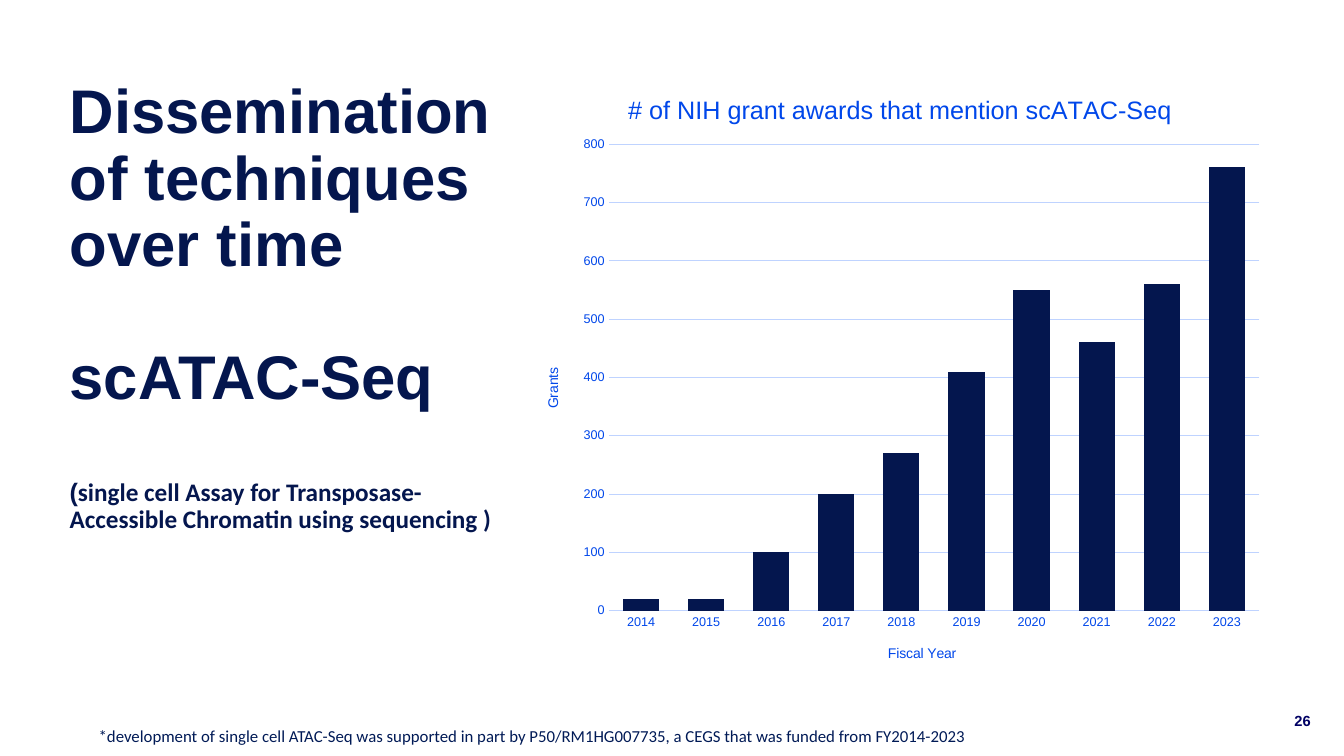
"""Slide on the spread of scATAC-Seq across NIH grant awards."""
import pptx
import pptx.util
import pptx.chart.data
import pptx.dml.color
import pptx.enum.chart
import pptx.enum.text
import pptx.oxml
import pptx.oxml.ns

Inches, Pt = pptx.util.Inches, pptx.util.Pt
HUES = {"navy": "04164E", "ink": "001A56", "blue": "0047EA", "pale": "BFD3FF", "page": "000064"}


def style(font, size, hue, bold=False, face="Arial"):
    font.name, font.size, font.bold = face, Pt(size), bold
    font.color.rgb = pptx.dml.color.RGBColor.from_string(HUES[hue])


def place(node, x, y, size=""):
    for old in node.findall(pptx.oxml.ns.qn("c:layout")):
        node.remove(old)
    inner = '<c:layoutTarget val="inner"/>' if size else ""
    layout = pptx.oxml.parse_xml(
        f'<c:layout {pptx.oxml.ns.nsdecls("c")}><c:manualLayout>{inner}'
        f'<c:xMode val="edge"/><c:yMode val="edge"/><c:x val="{x}"/><c:y val="{y}"/>{size}'
        "</c:manualLayout></c:layout>")
    text = node.find(pptx.oxml.ns.qn("c:tx"))
    if text is None:
        node.insert(0, layout)
    else:
        text.addnext(layout)


deck = pptx.Presentation()
deck.slide_width, deck.slide_height = Inches(13.33), Inches(7.5)
slide = deck.slides.add_slide(deck.slide_layouts[5])

title = slide.shapes.title
title.left, title.top, title.width, title.height = Inches(0.69), Inches(1.72), Inches(4.33), Inches(2.66)
frame = title.text_frame
frame.word_wrap = True
frame.auto_size = pptx.enum.text.MSO_AUTO_SIZE.NONE
frame.vertical_anchor = pptx.enum.text.MSO_ANCHOR.MIDDLE
frame.margin_left = 0
frame.text = "Dissemination of techniques over time\nscATAC-Seq"
note = frame.add_paragraph()
for part in ("(", "single cell Assay for Transposase-Accessible Chromatin using sequencing )"):
    note.add_run().text = part
for para, size, gap in zip(frame.paragraphs, (44, 44, 18), (0, 47.5, 47.5)):
    para.alignment = pptx.enum.text.PP_ALIGN.LEFT
    para.line_spacing = 0.9
    para.space_before = Pt(gap)
    if para.text.startswith("("):
        for run, face in zip(para.runs, ("Arial", "Calibri")):
            style(run.font, size, "navy", True, face)
    else:
        style(para.font, size, "navy", True)

data = pptx.chart.data.CategoryChartData()
data.categories = [str(year) for year in range(2014, 2024)]
data.add_series("Series 1", (20, 20, 100, 200, 270, 410, 550, 460, 560, 760))
chart = slide.shapes.add_chart(
    pptx.enum.chart.XL_CHART_TYPE.COLUMN_CLUSTERED,
    Inches(5.22), Inches(0.7), Inches(7.42), Inches(6.09), data).chart
chart.has_legend = False
style(chart.font, 10, "ink")
plot = chart.plots[0]
plot.gap_width, plot.overlap, plot.vary_by_categories = 80, -27, False
fill = plot.series[0].format.fill
fill.solid()
fill.fore_color.rgb = pptx.dml.color.RGBColor.from_string(HUES["navy"])

years, grants = chart.category_axis, chart.value_axis
grants.minimum_scale, grants.maximum_scale, grants.major_unit = 0, 800, 100
grants.has_major_gridlines = True
grants.format.line.fill.background()
for axis in (years, grants):
    axis.major_tick_mark = pptx.enum.chart.XL_TICK_MARK.NONE
    style(axis.tick_labels.font, 9, "blue")
for line in (years.format.line, grants.major_gridlines.format.line):
    line.width = Pt(0.75)
    line.color.rgb = pptx.dml.color.RGBColor.from_string(HUES["pale"])

for owner, text, size, x, y in (
        (chart, "# of NIH grant awards that mention scATAC-Seq", 18, 0.13, 0.03),
        (years, "Fiscal Year", 10, 0.48, 0.93),
        (grants, "Grants", 10, 0.02, 0.48)):
    head = owner.chart_title if owner is chart else owner.axis_title
    head.text_frame.text = text
    style(head.text_frame.paragraphs[0].font, size, "blue")
    place(head._element, x, y)
area = chart.element.find(".//" + pptx.oxml.ns.qn("c:plotArea"))
place(area, 0.11, 0.12, '<c:w val="0.87"/><c:h val="0.76"/>')

for text, x, y, w, h, size, hue, bold, face in (
        ("26", 12.74, 6.95, 0.38, 0.4, 10.5, "page", True, "Arial"),
        ("*development of single cell ATAC-Seq was supported in part by P50/RM1HG007735, "
         "a CEGS that was funded from FY2014-2023", 0.88, 7.15, 8.95, 0.3, 12, "ink", False, "Calibri")):
    frame = slide.shapes.add_textbox(Inches(x), Inches(y), Inches(w), Inches(h)).text_frame
    frame.word_wrap = True
    if bold:
        frame.vertical_anchor = pptx.enum.text.MSO_ANCHOR.MIDDLE
    frame.text = text
    style(frame.paragraphs[0].font, size, hue, bold, face)

deck.save("out.pptx")
